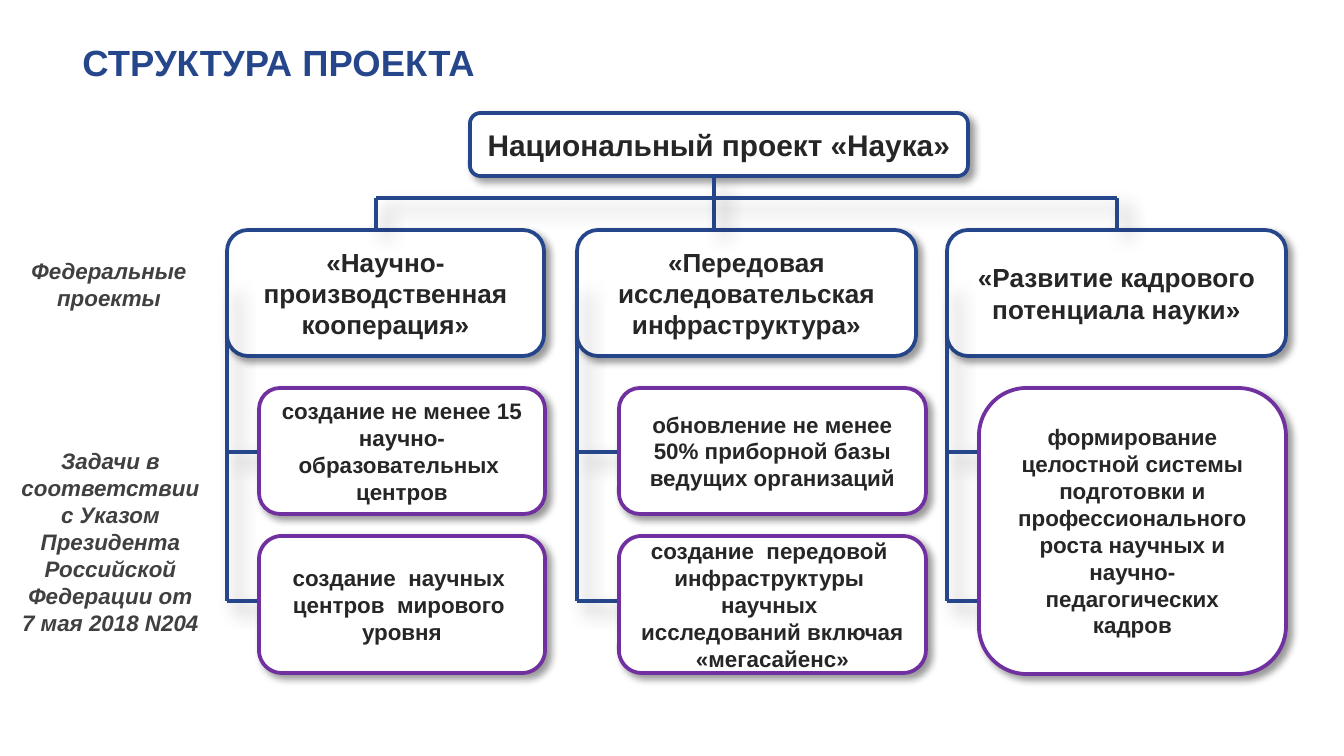
from lxml.etree import SubElement
from pptx import Presentation
from pptx.dml.color import RGBColor
from pptx.enum.shapes import MSO_CONNECTOR, MSO_SHAPE
from pptx.enum.text import MSO_ANCHOR, MSO_AUTO_SIZE, PP_ALIGN
from pptx.oxml.ns import qn
from pptx.util import Emu, Pt

PX_PER_INCH = 134.4
COLORS = {
    "blue": "25468A",
    "purple": "7030A0",
    "white": "FFFFFF",
    "text": "262626",
    "label": "404040",
    "shadow": "000000",
}
PROJECT_TOP, PROJECT_HEIGHT = 230, 126
BUS_Y = 198
TRUNK_TOP = 282
BRANCH_YS = (452, 601)

# Each task: text, top, height
COLUMNS = [
    {
        "project": "«Научно-производственная кооперация»",
        "left": 227, "width": 317, "drop": 376,
        "task_left": 259, "task_width": 286,
        "tasks": [
            ("создание не менее 15 научно-образовательных  центров", 388, 126),
            ("создание  научных  центров  мирового  уровня", 536, 137),
        ],
    },
    {
        "project": "«Передовая исследовательская инфраструктура»",
        "left": 577, "width": 339, "drop": 714,
        "task_left": 619, "task_width": 307,
        "tasks": [
            ("обновление не менее 50% приборной базы ведущих организаций", 388, 126),
            ("создание  передовой  инфраструктуры  научных  исследований "
             "включая «мегасайенс»", 536, 137),
        ],
    },
    {
        "project": "«Развитие кадрового потенциала науки»",
        "left": 947, "width": 339, "drop": 1117,
        "task_left": 979, "task_width": 307,
        "tasks": [
            ("формирование целостной системы подготовки и профессионального "
             "роста научных и научно-педагогических кадров", 388, 286),
        ],
    },
]


def px(n):
    return Emu(round(n * 914400 / PX_PER_INCH))


def rgb(name):
    return RGBColor.from_string(COLORS[name])


def add_run(p, text, size, color, italic=False):
    r = p.add_run()
    r.text = text
    r.font.name = "Arial"
    r.font.size = Pt(size)
    r.font.bold = True
    r.font.italic = italic
    r.font.color.rgb = rgb(color)


def add_shadow(sp, alpha, blur, dist):
    """Cast a shadow to the lower right; alpha in percent, lengths in points."""
    effects = SubElement(sp._element.spPr, qn("a:effectLst"))
    shadow = SubElement(effects, qn("a:outerShdw"), blurRad=str(Pt(blur)),
                        dist=str(Pt(dist)), dir=str(45 * 60000),
                        algn="tl", rotWithShape="0")
    color = SubElement(shadow, qn("a:srgbClr"), val=COLORS["shadow"])
    SubElement(color, qn("a:alpha"), val=str(alpha * 1000))


def set_title(s, text):
    title = s.shapes.title
    title.left, title.top, title.width, title.height = map(px, (69, 19, 1210, 85))
    tf = title.text_frame
    tf.auto_size = MSO_AUTO_SIZE.NONE
    tf.vertical_anchor = MSO_ANCHOR.MIDDLE
    p = tf.paragraphs[0]
    p.alignment = PP_ALIGN.LEFT
    add_run(p, text, 19.5, "blue")


def add_box(s, text, left, top, width, height, size, outline):
    sp = s.shapes.add_shape(MSO_SHAPE.ROUNDED_RECTANGLE,
                            px(left), px(top), px(width), px(height))
    sp.fill.solid()
    sp.fill.fore_color.rgb = rgb("white")
    sp.line.color.rgb = rgb(outline)
    sp.line.width = Pt(2)
    add_shadow(sp, 40, 4, 3)
    tf = sp.text_frame
    tf.word_wrap = True
    tf.vertical_anchor = MSO_ANCHOR.MIDDLE
    p = tf.paragraphs[0]
    p.alignment = PP_ALIGN.CENTER
    add_run(p, text, size, "text")


def add_line(s, x1, y1, x2, y2):
    line = s.shapes.add_connector(MSO_CONNECTOR.STRAIGHT,
                                  px(x1), px(y1), px(x2), px(y2))
    line.line.color.rgb = rgb("blue")
    line.line.width = Pt(2)
    add_shadow(line, 35, 10.2, 8)


def add_label(s, lines, left, top, width, height, wrap):
    box = s.shapes.add_textbox(px(left), px(top), px(width), px(height))
    tf = box.text_frame
    tf.word_wrap = wrap
    tf.auto_size = MSO_AUTO_SIZE.SHAPE_TO_FIT_TEXT
    for i, text in enumerate(lines):
        p = tf.add_paragraph() if i else tf.paragraphs[0]
        p.alignment = PP_ALIGN.CENTER
        add_run(p, text, 12, "label", italic=True)


def add_bus(s):
    """Join the national project to the three federal projects."""
    drops = [col["drop"] for col in COLUMNS]
    add_line(s, drops[1], 177, drops[1], PROJECT_TOP)
    add_line(s, drops[0], BUS_Y, drops[-1], BUS_Y)
    for x in (drops[0], drops[-1]):
        add_line(s, x, BUS_Y, x, PROJECT_TOP)


def add_tasks(s, col):
    """Draw the trunk and branches of a column, then its task boxes."""
    left = col["left"]
    add_line(s, left, TRUNK_TOP, left, BRANCH_YS[-1])
    for y in BRANCH_YS:
        add_line(s, left, y, col["task_left"], y)
    for text, top, height in col["tasks"]:
        add_box(s, text, col["task_left"], top, col["task_width"], height,
                12, "purple")


def main():
    prs = Presentation()
    prs.slide_width, prs.slide_height = px(1344), px(756)
    s = prs.slides.add_slide(prs.slide_layouts[5])

    set_title(s, "СТРУКТУРА ПРОЕКТА")
    add_box(s, "Национальный проект «Наука»", 470, 113, 498, 63, 16, "blue")
    add_label(s, ["Федеральные", "проекты"], 13, 251, 192, 67, wrap=False)
    add_label(s, ["Задачи в соответствии с Указом Президента Российской Федерации от",
                  "7 мая 2018 N204"], 5, 441, 211, 203, wrap=True)
    for col in COLUMNS:
        add_box(s, col["project"], col["left"], PROJECT_TOP, col["width"],
                PROJECT_HEIGHT, 14, "blue")
    add_bus(s)
    for col in COLUMNS:
        add_tasks(s, col)

    prs.save("out.pptx")


if __name__ == "__main__":
    main()
